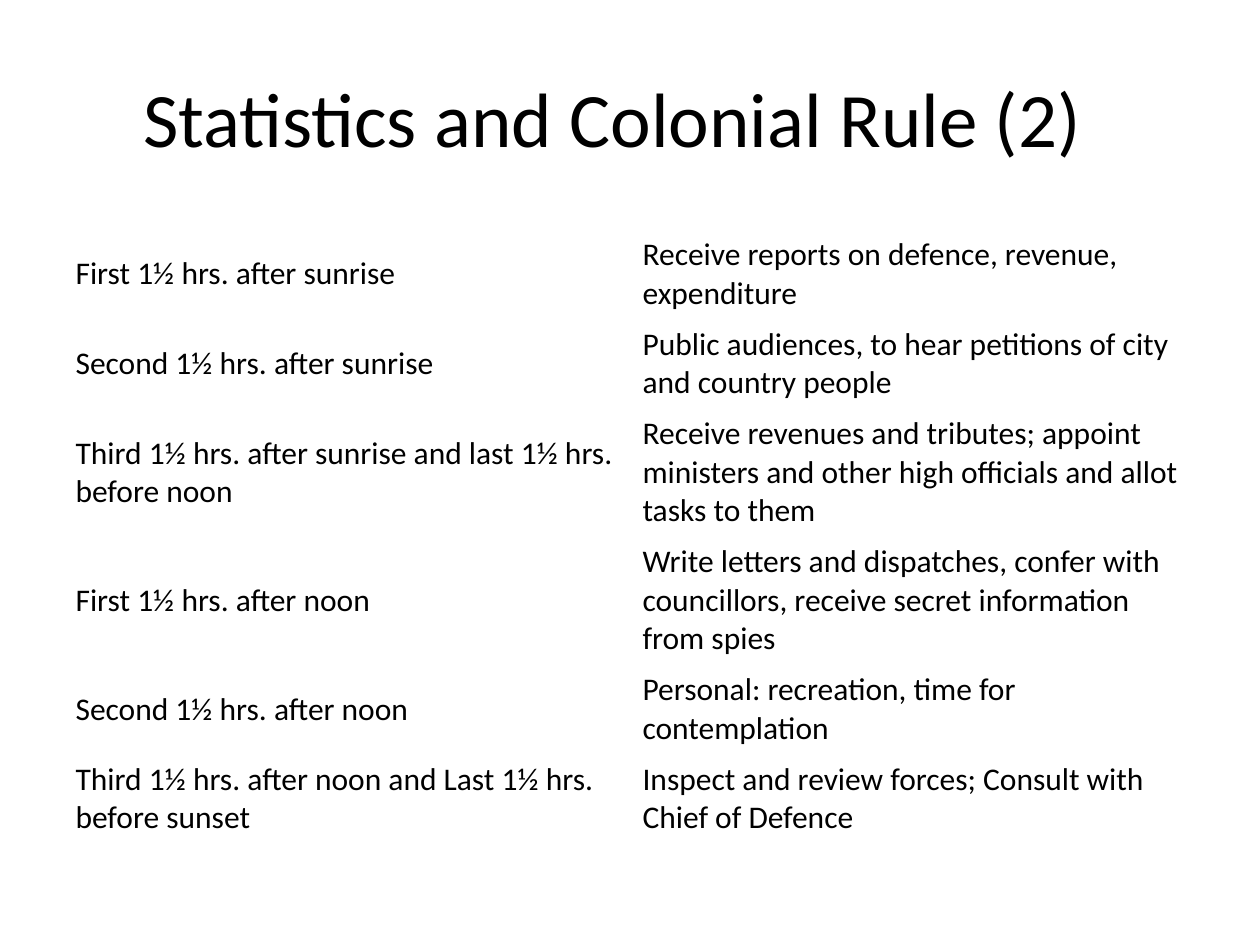
from dataclasses import dataclass

from pptx import Presentation
from pptx.dml.color import RGBColor
from pptx.enum.text import MSO_ANCHOR as Anchor, PP_ALIGN as Align
from pptx.util import Pt

BLACK = RGBColor(0x00, 0x00, 0x00)
FONT = "Calibri"
LEFT, WIDTH = 36, 648
TABLE_TOP = 131
LINE_HEIGHT, CELL_PADDING = 22, 7.2
PLAIN_TABLE = dict(first_row=False, horz_banding=False)


@dataclass
class Duty:
    time: str
    task: str
    lines: int = 2


DUTIES = [
    Duty("First 1½ hrs. after sunrise",
         "Receive reports on defence, revenue, expenditure"),
    Duty("Second 1½ hrs. after sunrise",
         "Public audiences, to hear petitions of city and country people"),
    Duty("Third 1½ hrs. after sunrise and last 1½ hrs. before noon",
         "Receive revenues and tributes; appoint ministers and other high "
         "officials and allot tasks to them", 3),
    Duty("First 1½ hrs. after noon",
         "Write letters and dispatches, confer with councillors, receive "
         "secret information from spies", 3),
    Duty("Second 1½ hrs. after noon",
         "Personal: recreation, time for contemplation"),
    Duty("Third 1½ hrs. after noon and Last 1½ hrs. before sunset",
         "Inspect and review forces; Consult with Chief of Defence"),
]


def write(tf, text: str, size: float, align: Align = Align.LEFT) -> None:
    p = tf.paragraphs[0]
    p.alignment = align
    r = p.add_run()
    r.text = text
    for name, value in dict(name=FONT, size=Pt(size)).items():
        setattr(r.font, name, value)
    r.font.color.rgb = BLACK


def draw_title(s, text: str) -> None:
    sp = s.shapes.add_textbox(Pt(LEFT), Pt(21.6), Pt(WIDTH), Pt(90))
    tf = sp.text_frame
    for name, value in dict(word_wrap=True, vertical_anchor=Anchor.MIDDLE).items():
        setattr(tf, name, value)
    write(tf, text, 44, Align.CENTER)


def draw_duties(s, duties: list[Duty]) -> None:
    heights = [d.lines * LINE_HEIGHT + CELL_PADDING for d in duties]
    table = s.shapes.add_table(len(duties), 2, Pt(LEFT), Pt(TABLE_TOP),
                               Pt(WIDTH), Pt(sum(heights))).table
    for name, value in PLAIN_TABLE.items():
        setattr(table, name, value)
    for row, duty, height in zip(table.rows, duties, heights):
        row.height = Pt(height)
        for cell, text in zip(row.cells, (duty.time, duty.task)):
            cell.fill.background()
            cell.vertical_anchor = Anchor.MIDDLE
            write(cell.text_frame, text, 18)


def main() -> None:
    """Build the slide on the daily timetable of a ruler."""
    prs = Presentation()
    prs.slide_width, prs.slide_height = Pt(720), Pt(540)
    s = prs.slides.add_slide(prs.slide_layouts[6])
    draw_title(s, "Statistics and Colonial Rule (2)  ")
    draw_duties(s, DUTIES)
    prs.save("out.pptx")


if __name__ == "__main__":
    main()
